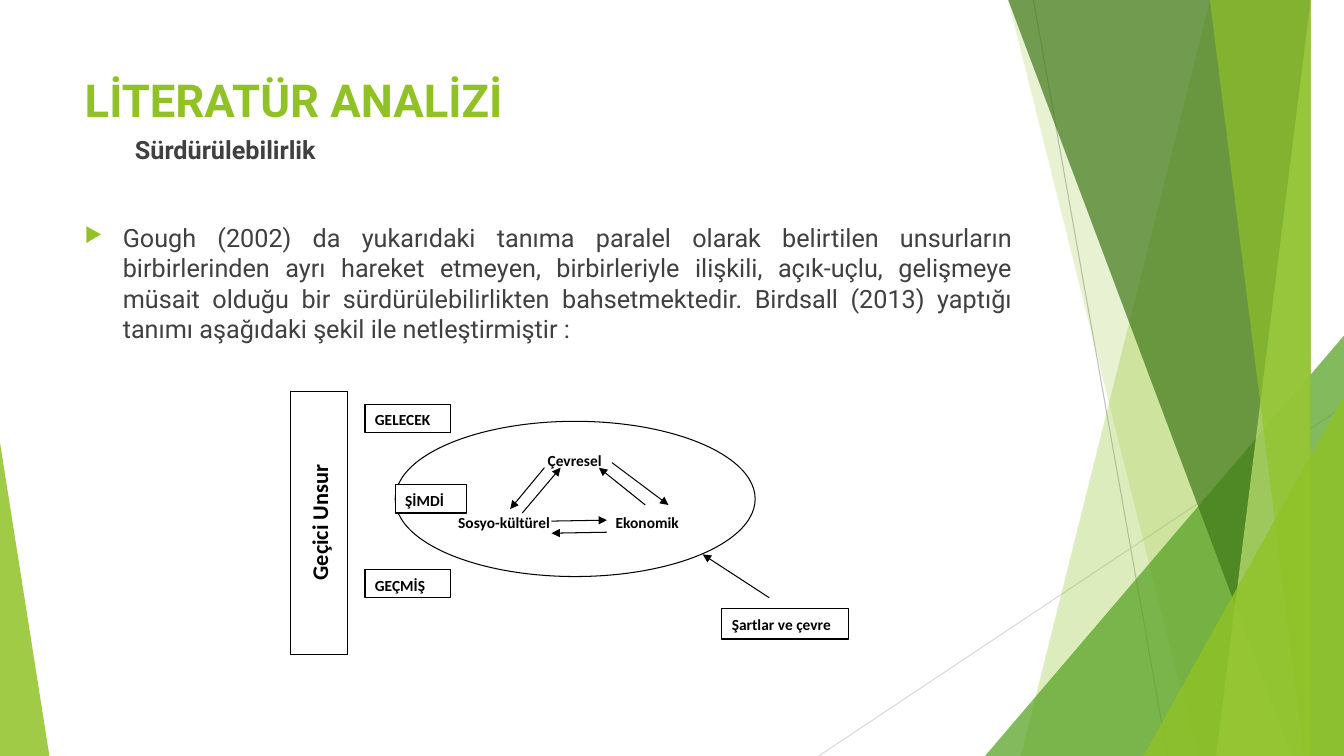
from lxml.etree import SubElement
from pptx import Presentation
from pptx.dml.color import RGBColor
from pptx.enum.shapes import MSO_CONNECTOR, MSO_SHAPE
from pptx.enum.text import MSO_ANCHOR as ANCHOR, MSO_AUTO_SIZE, PP_ALIGN as ALIGN
from pptx.oxml.ns import qn
from pptx.util import Inches, Pt

WIDTH, HEIGHT = 13.33, 7.5


def rgb(value):
    return RGBColor.from_string(value)


class Deck:
    heading, label = "Roboto", "Calibri"
    green, body, black, white = "90C226", "404040", "000000", "FFFFFF"

    def __init__(self):
        self.prs = Presentation()
        self.prs.slide_width, self.prs.slide_height = Inches(WIDTH), Inches(HEIGHT)
        self.s = self.prs.slides.add_slide(self.prs.slide_layouts[5])

    def frame(self, sp, anchor=ANCHOR.TOP, inset=(0.1, 0.05)):
        tf = sp.text_frame
        tf.word_wrap = True
        tf.auto_size = MSO_AUTO_SIZE.NONE
        tf.vertical_anchor = anchor
        tf.margin_left = tf.margin_right = Inches(inset[0])
        tf.margin_top = tf.margin_bottom = Inches(inset[1])
        return tf

    def run(self, p, text, size, font, color, bold=True, align=ALIGN.LEFT):
        p.alignment = align
        r = p.add_run()
        r.text = text
        r.font.size, r.font.name, r.font.bold = Pt(size), font, bold
        r.font.color.rgb = rgb(color)

    def title(self, text, box):
        sp = self.s.shapes.title
        sp.left, sp.top, sp.width, sp.height = map(Inches, box)
        self.run(self.frame(sp).paragraphs[0], text, 32.4, self.heading, self.green)

    def content(self, subtitle, text, box):
        tf = self.frame(self.s.shapes.add_textbox(*map(Inches, box)))
        p = tf.paragraphs[0]
        self.run(p, subtitle, 18, self.heading, self.body)
        p._p.get_or_add_pPr().set("marL", str(Inches(0.5)))
        p = tf.add_paragraph()
        self.run(p, text, 18, self.heading, self.body, False, ALIGN.JUSTIFY)
        p.space_before = Pt(41.6)
        pPr = p._p.get_or_add_pPr()
        pPr.set("marL", str(Inches(0.38)))
        pPr.set("indent", str(-Inches(0.38)))
        SubElement(SubElement(pPr, qn("a:buClr")), qn("a:srgbClr"), val=self.green)
        SubElement(pPr, qn("a:buSzPct"), val="80000")
        SubElement(pPr, qn("a:buChar"), char="▶")

    def paint(self, sp, fill, alpha=100, outline=None):
        sp.shadow.inherit = False
        sp.fill.solid()
        sp.fill.fore_color.rgb = rgb(fill)
        if alpha < 100:
            color = sp.fill._xPr.find(qn("a:solidFill")).find(qn("a:srgbClr"))
            SubElement(color, qn("a:alpha"), val=str(alpha * 1000))
        if outline:
            sp.line.color.rgb = rgb(outline)
            sp.line.width = Pt(0.75)
        else:
            sp.line.fill.background()

    def band(self, top_x, bottom_x, color, alpha):
        fb = self.s.shapes.build_freeform(top_x, 0, scale=Inches(1))
        fb.add_line_segments([(WIDTH, 0), (WIDTH, HEIGHT), (bottom_x, HEIGHT)])
        self.paint(fb.convert_to_shape(), color, alpha)

    def corner(self, left, top, width, apex, color, alpha):
        box = map(Inches, (left, top, width, HEIGHT - top))
        sp = self.s.shapes.add_shape(MSO_SHAPE.ISOSCELES_TRIANGLE, *box)
        sp.adjustments[0] = apex
        self.paint(sp, color, alpha)

    def line(self, start, end, color, arrow=False):
        points = map(Inches, (*start, *end))
        sp = self.s.shapes.add_connector(MSO_CONNECTOR.STRAIGHT, *points)
        sp.line.color.rgb = rgb(color)
        sp.line.width = Pt(0.75)
        if arrow:
            SubElement(sp.line._get_or_add_ln(), qn("a:tailEnd"), type="triangle")
        SubElement(sp._element.spPr, qn("a:effectLst"))

    def outlined(self, kind, box):
        sp = self.s.shapes.add_shape(kind, *map(Inches, box))
        self.paint(sp, self.white, outline=self.black)
        return sp

    def box(self, text, box):
        tf = self.frame(self.outlined(MSO_SHAPE.RECTANGLE, box))
        tf.paragraphs[0].line_spacing = 1.07
        self.run(tf.paragraphs[0], text, 11, self.label, self.black)

    def vertical_box(self, text, box):
        tf = self.frame(self.outlined(MSO_SHAPE.RECTANGLE, box), ANCHOR.MIDDLE)
        tf._txBody.bodyPr.set("vert", "vert270")
        self.run(tf.paragraphs[0], text, 16, self.label, self.black, align=ALIGN.CENTER)

    def caption(self, text, x, y, width=1.1, height=0.24):
        box = map(Inches, (x - width / 2, y - height / 2, width, height))
        tf = self.frame(self.s.shapes.add_textbox(*box), ANCHOR.MIDDLE, (0, 0))
        self.run(tf.paragraphs[0], text, 11, self.label, self.black, align=ALIGN.CENTER)


def main():
    d = Deck()
    d.line((10.25, 0), (11.58, HEIGHT), "BFBFBF")
    d.line((WIDTH, 4.03), (8.12, HEIGHT), "D9D9D9")
    d.band(12.28, 10.04, d.green, 30)
    d.band(10.5, 11.83, d.green, 20)
    d.corner(9.77, 3.33, 3.56, 1, "54A021", 72)
    d.band(10.21, 12.91, "3F7819", 70)
    d.band(13.03, 11.92, "C0E474", 70)
    d.band(11.96, 13.18, d.green, 65)
    d.corner(11.34, 3.93, 1.99, 1, d.green, 80)
    d.corner(0, 4.39, 0.49, 0, d.green, 85)

    d.title("LİTERATÜR ANALİZİ", (0.74, 0.67, 9.4, 0.88))
    d.content(
        "Sürdürülebilirlik",
        "Gough (2002) da yukarıdaki tanıma paralel olarak belirtilen unsurların "
        "birbirlerinden ayrı hareket etmeyen, birbirleriyle ilişkili, açık-uçlu, "
        "gelişmeye müsait olduğu bir sürdürülebilirlikten bahsetmektedir. Birdsall "
        "(2013) yaptığı tanımı aşağıdaki şekil ile netleştirmiştir :",
        (0.74, 1.28, 9.4, 5.33),
    )

    d.outlined(MSO_SHAPE.OVAL, (3.92, 4.18, 3.57, 1.54))
    for text, x, y in (
        ("Çevresel", 5.7, 4.57),
        ("Sosyo-kültürel", 5.0, 5.18),
        ("Ekonomik", 6.42, 5.18),
    ):
        d.caption(text, x, y)
    for start, end in (
        ((5.18, 5.09), (5.56, 4.64)),
        ((5.4, 4.64), (5.06, 5.05)),
        ((5.47, 5.17), (6.02, 5.16)),
        ((6.02, 5.28), (5.47, 5.29)),
        ((6.4, 5.01), (5.94, 4.64)),
        ((6.07, 4.59), (6.63, 5.01)),
        ((7.63, 5.93), (6.97, 5.5)),
    ):
        d.line(start, end, d.black, arrow=True)

    d.vertical_box("Geçici Unsur", (2.88, 3.88, 0.57, 2.61))
    for text, box in (
        ("ŞİMDİ", (3.92, 4.81, 0.71, 0.28)),
        ("GELECEK", (3.62, 4.01, 0.85, 0.28)),
        ("GEÇMİŞ", (3.62, 5.65, 0.85, 0.28)),
        ("Şartlar ve çevre", (7.16, 6.04, 1.26, 0.3)),
    ):
        d.box(text, box)
    d.prs.save("out.pptx")


if __name__ == "__main__":
    main()
